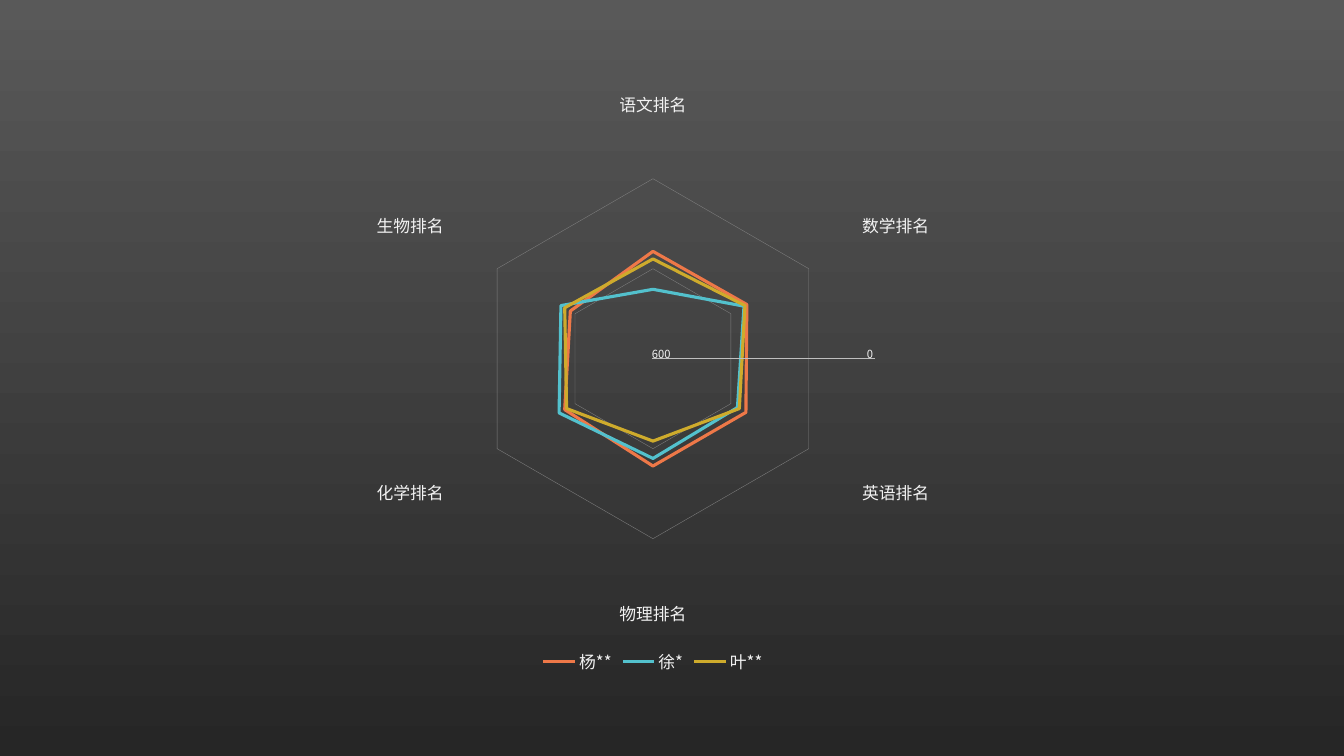
import pptx
import pptx.util
import pptx.chart.data
import pptx.dml.color
import pptx.enum.chart
import pptx.enum.shapes
import pptx.enum.text
import pptx.oxml

# Content
SUBJECTS = ["语文排名", "数学排名", "英语排名", "物理排名", "化学排名", "生物排名"]
STUDENTS = [
    ("杨**", "orange", (99, 100, 99, 99, 94, 88)),
    ("徐*", "teal", (64, 97, 90, 92, 100, 98)),
    ("叶**", "gold", (92, 98, 92, 76, 92, 94)),
]
SCALE_LABELS = [("600", 642), ("0", 857)]
COLORS = {
    "orange": "EE7848", "teal": "53C1CD", "gold": "CEAB2C", "text": "F2F2F2",
    "grid": "808080", "axis": "D9D9D9", "scale": "BFBFBF",
    "top": "595959", "bottom": "262626",
}
FONT = "Noto Sans CJK SC"
RING_STEP, AXIS_MAX = 83, 190
EMU_PER_PX = 914400 / 100.8


def px(length):
    return pptx.util.Emu(round(length * EMU_PER_PX))


def color(name):
    return pptx.dml.color.RGBColor.from_string(COLORS[name])


def set_font(font, size):
    font.name = FONT
    font.size = pptx.util.Pt(size)
    font.color.rgb = color("text")


def set_line(line, name, width):
    line.color.rgb = color(name)
    line.width = pptx.util.Pt(width)


def add_label(slide, text, left, top, width, height, size):
    label = slide.shapes.add_textbox(px(left), px(top), px(width), px(height))
    label.text_frame.word_wrap = True
    label.text_frame.auto_size = pptx.enum.text.MSO_AUTO_SIZE.SHAPE_TO_FIT_TEXT
    run = label.text_frame.paragraphs[0].add_run()
    run.text = text
    set_font(run.font, size)
    # East Asian typeface
    run.font._element.append(pptx.oxml.parse_xml(
        '<a:ea xmlns:a="http://schemas.openxmlformats.org/drawingml/2006/main" '
        f'typeface="{FONT}"/>'))


def add_radar(slide):
    ranks = pptx.chart.data.CategoryChartData()
    ranks.categories = SUBJECTS
    for name, _, values in STUDENTS:
        ranks.add_series(name, values)
    radar = slide.shapes.add_chart(
        pptx.enum.chart.XL_CHART_TYPE.RADAR,
        px(205), px(80), px(896), px(598), ranks).chart
    radar.has_title = False
    set_font(radar.font, 10)
    radar.plots[0].vary_by_categories = False

    for series, (_, hue, _) in zip(radar.plots[0].series, STUDENTS):
        set_line(series.format.line, hue, 2.25)
        series.smooth = False
        series.marker.style = pptx.enum.chart.XL_MARKER_STYLE.NONE

    subjects = radar.category_axis
    subjects.has_major_gridlines = False
    subjects.major_tick_mark = pptx.enum.chart.XL_TICK_MARK.NONE
    set_font(subjects.tick_labels.font, 12)
    set_line(subjects.format.line, "axis", 0.75)

    rings = radar.value_axis
    rings.minimum_scale, rings.maximum_scale = 0, AXIS_MAX
    rings.major_unit = RING_STEP
    rings.has_major_gridlines = True
    set_line(rings.major_gridlines.format.line, "grid", 0.25)
    rings.visible = False

    radar.has_legend = True
    radar.legend.position = pptx.enum.chart.XL_LEGEND_POSITION.BOTTOM
    radar.legend.include_in_layout = False
    set_font(radar.legend.font, 12)


def main():
    deck = pptx.Presentation()
    deck.slide_width, deck.slide_height = px(1344), px(756)
    slide = deck.slides.add_slide(deck.slide_layouts[6])

    # Background
    fill = slide.background.fill
    fill.gradient()
    fill.gradient_angle = 270
    for stop, name, position in zip(fill.gradient_stops, ("top", "bottom"), (0, 1)):
        stop.color.rgb = color(name)
        stop.position = position

    add_radar(slide)

    # Rank scale from the centre outwards
    scale = slide.shapes.add_connector(
        pptx.enum.shapes.MSO_CONNECTOR.STRAIGHT, px(652), px(358), px(875), px(358))
    set_line(scale.line, "scale", 0.25)
    scale._element.spPr.append(pptx.oxml.parse_xml(
        '<a:effectLst xmlns:a="http://schemas.openxmlformats.org/drawingml/2006/main"/>'))
    for text, left in SCALE_LABELS:
        add_label(slide, text, left, top=342, width=45, height=24, size=8)

    deck.save("out.pptx")


if __name__ == "__main__":
    main()
